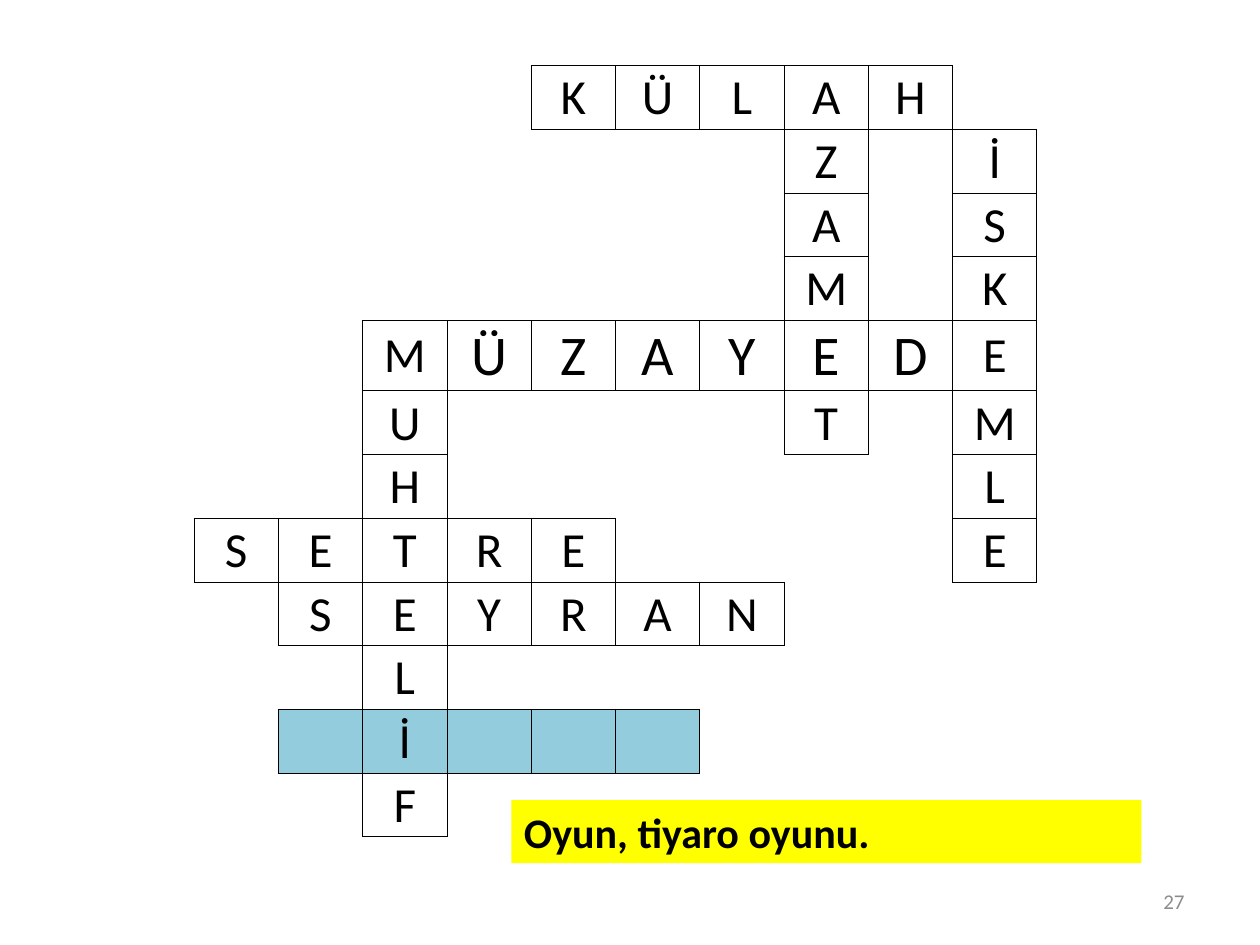
from dataclasses import dataclass

from lxml.etree import SubElement
from pptx import Presentation
from pptx.dml.color import RGBColor
from pptx.enum.shapes import MSO_SHAPE
from pptx.enum.text import MSO_ANCHOR, MSO_AUTO_SIZE, PP_ALIGN
from pptx.oxml.ns import qn
from pptx.util import Inches, Pt


@dataclass(frozen=True)
class Theme:
    font: str = "Calibri"
    ink: str = "000000"
    muted: str = "8C8C8C"
    highlight: str = "93CDDD"
    banner: str = "FFFF00"
    letter: int = 28
    large: int = 32
    clue: int = 24
    number: int = 12
    border: float = 0.5


THEME = Theme()
ROWS, COLS = 12, 10
TALL_ROW = 4
NO_STYLE = "{2D5ABB26-0587-4C30-8999-92F81FD0307C}"
SIDES = {"lnL": (0, -1), "lnR": (0, 1), "lnT": (-1, 0), "lnB": (1, 0)}


@dataclass(frozen=True)
class Word:
    text: str
    row: int
    col: int
    down: bool = False
    size: int = THEME.letter

    def squares(self) -> list[tuple[int, int]]:
        return [(self.row + i * self.down, self.col + i * (not self.down))
                for i in range(len(self.text))]


# Where words cross, the later one sets the letter and its size.
WORDS = [
    Word("KÜLAH", 0, 4),
    Word("AZAMET", 0, 7, down=True),
    Word("MÜZAYEDE", TALL_ROW, 2, size=THEME.large),
    Word("İSKEMLE", 1, 9, down=True),
    Word("SETRE", 7, 0),
    Word("SEYRAN", 8, 1),
    Word("MUHTELİF", 4, 2, down=True),
]
OPEN_SQUARES = {(10, col) for col in range(1, 6)}


def write(tf, text: str, size: int, color: str, align=PP_ALIGN.LEFT, bold=False) -> None:
    tf.text = text
    p = tf.paragraphs[0]
    p.alignment = align
    r = p.runs[0]
    for name, value in {"name": THEME.font, "size": Pt(size), "bold": bold}.items():
        setattr(r.font, name, value)
    r.font.color.rgb = RGBColor.from_string(color)


def draw_borders(cell, lined: set[str]) -> None:
    """Line some sides and clear the rest; lines precede the fill in the cell."""
    tc_pr = cell._tc.get_or_add_tcPr()
    for i, side in enumerate(SIDES):
        ln = SubElement(tc_pr, qn(f"a:{side}"), w=str(Pt(THEME.border)))
        if side in lined:
            fill = SubElement(ln, qn("a:solidFill"))
            SubElement(fill, qn("a:srgbClr"), val=THEME.ink)
        else:
            SubElement(ln, qn("a:noFill"))
        tc_pr.insert(i, ln)


def add_crossword(s) -> None:
    table = s.shapes.add_table(ROWS, COLS, Inches(1.54), Inches(0.52),
                               Inches(6.69), Inches(6.07)).table
    table.first_row = table.horz_banding = False
    table._tbl.tblPr.find(qn("a:tableStyleId")).text = NO_STYLE
    table.rows[TALL_ROW].height = Inches(0.56)
    used = OPEN_SQUARES.union(*(word.squares() for word in WORDS))

    for row in range(ROWS):
        for col in range(COLS):
            cell = table.cell(row, col)
            if (row, col) in OPEN_SQUARES:
                cell.fill.solid()
                cell.fill.fore_color.rgb = RGBColor.from_string(THEME.highlight)
            else:
                cell.fill.background()
            draw_borders(cell, {side for side, (dr, dc) in SIDES.items()
                                if used & {(row, col), (row + dr, col + dc)}})

    edge = Inches(0.01)
    layout = {"margin_left": edge, "margin_right": edge, "margin_top": edge,
              "margin_bottom": 0, "vertical_anchor": MSO_ANCHOR.MIDDLE}
    for word in WORDS:
        for letter, square in zip(word.text, word.squares()):
            cell = table.cell(*square)
            for name, value in layout.items():
                setattr(cell, name, value)
            write(cell.text_frame, letter, word.size, THEME.ink, PP_ALIGN.CENTER)


def add_clue(s, text: str) -> None:
    sp = s.shapes.add_shape(MSO_SHAPE.RECTANGLE, Inches(4.06), Inches(6.35),
                            Inches(5), Inches(0.5))
    sp.shadow.inherit = False
    sp.fill.solid()
    sp.fill.fore_color.rgb = RGBColor.from_string(THEME.banner)
    sp.line.fill.background()
    tf = sp.text_frame
    for name, value in {"word_wrap": True, "vertical_anchor": MSO_ANCHOR.TOP,
                        "auto_size": MSO_AUTO_SIZE.SHAPE_TO_FIT_TEXT}.items():
        setattr(tf, name, value)
    write(tf, text, THEME.clue, THEME.ink, bold=True)


def add_page_number(s, number: int) -> None:
    tf = s.shapes.add_textbox(Inches(7.17), Inches(6.95),
                              Inches(2.33), Inches(0.4)).text_frame
    tf.word_wrap = True
    tf.vertical_anchor = MSO_ANCHOR.MIDDLE
    write(tf, str(number), THEME.number, THEME.muted, PP_ALIGN.RIGHT)


def main() -> None:
    prs = Presentation()
    prs.slide_width, prs.slide_height = Inches(10), Inches(7.5)
    s = prs.slides.add_slide(prs.slide_layouts[6])
    add_page_number(s, 27)
    add_crossword(s)
    add_clue(s, "Oyun, tiyaro oyunu.")
    prs.save("out.pptx")


if __name__ == "__main__":
    main()
